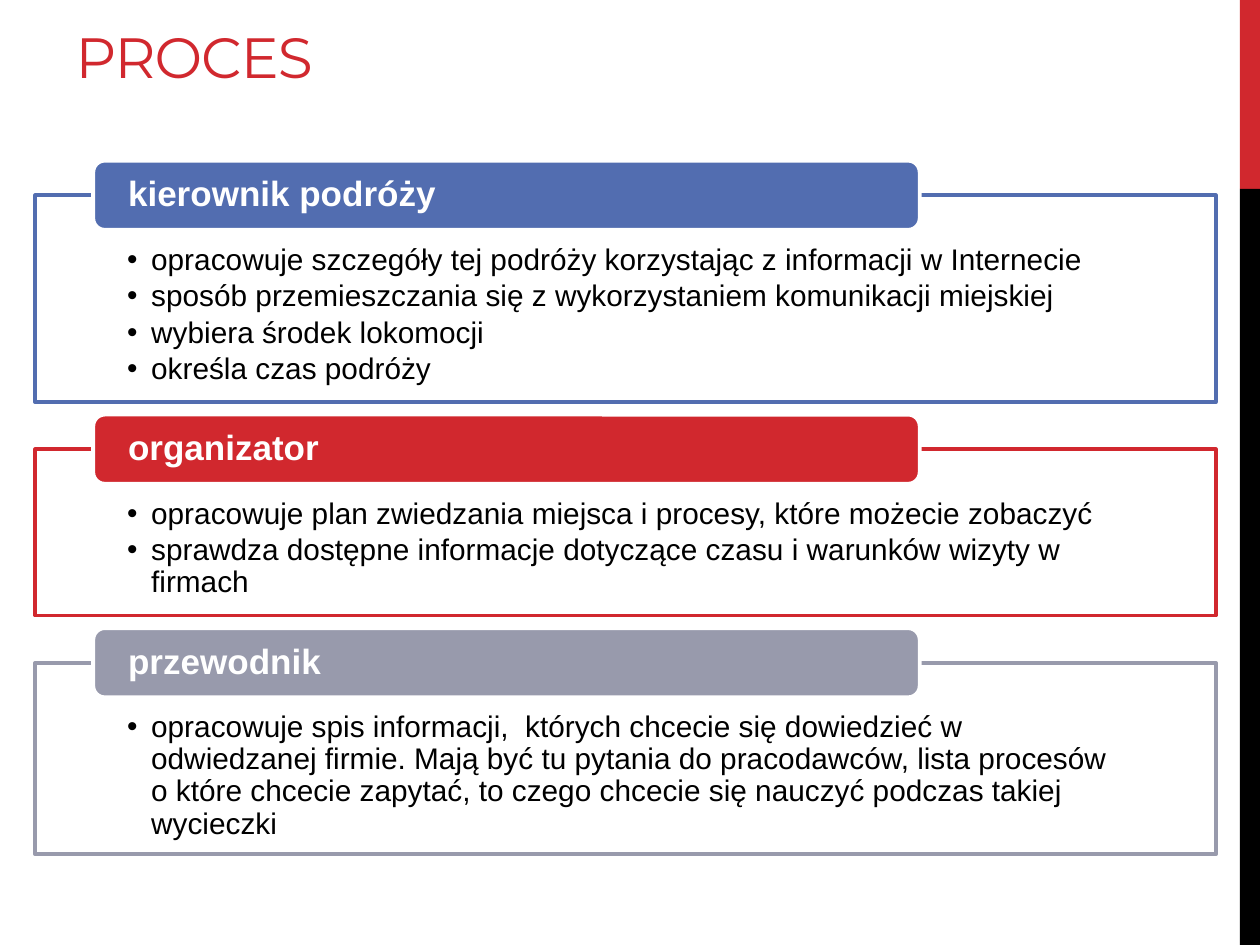
from lxml import etree
from pptx import Presentation
from pptx.dml.color import RGBColor
from pptx.enum.shapes import MSO_SHAPE
from pptx.enum.text import MSO_ANCHOR, MSO_AUTO_SIZE, PP_ALIGN
from pptx.oxml.ns import qn
from pptx.util import Inches, Pt

RECT = MSO_SHAPE.RECTANGLE
ROUND = MSO_SHAPE.ROUNDED_RECTANGLE
TOP, MID, LOW = MSO_ANCHOR.TOP, MSO_ANCHOR.MIDDLE, MSO_ANCHOR.BOTTOM
LEFT = PP_ALIGN.LEFT
NONE = MSO_AUTO_SIZE.NONE

HUES = {"red": "D1282E", "blue": "526DB0", "gray": "989AAC",
        "black": "000000", "white": "FFFFFF"}

deck = Presentation()
deck.slide_width, deck.slide_height = Inches(10), Inches(7.5)
COL, ROW = deck.slide_width / 100, deck.slide_height / 100
slide = deck.slides.add_slide(deck.slide_layouts[5])


def add_box(kind, x, y, w, h, fill, line=None):
    box = slide.shapes.add_shape(
        kind, int(x * COL), int(y * ROW), int(w * COL), int(h * ROW))
    box.shadow.inherit = False
    box.fill.solid()
    box.fill.fore_color.rgb = RGBColor.from_string(HUES[fill])
    if line:
        box.line.color.rgb = RGBColor.from_string(HUES[line])
        box.line.width = Pt(2.25)
    else:
        box.line.fill.background()
    return box


def put_text(box, lines, size, hue, font="Arial", bold=False, anchor=TOP,
             pad=(0.1, 0.05, 0.1, 0.05), space=None, after=0, bullet=False):
    frame = box.text_frame
    frame.word_wrap = True
    frame.auto_size = NONE
    frame.vertical_anchor = anchor
    (frame.margin_left, frame.margin_top,
     frame.margin_right, frame.margin_bottom) = map(Inches, pad)
    for i, line in enumerate(lines):
        para = frame.paragraphs[0] if i == 0 else frame.add_paragraph()
        para.alignment = LEFT
        para.line_spacing = space
        para.space_before = Pt(0)
        para.space_after = Pt(after)
        if bullet:
            props = para._p.get_or_add_pPr()
            props.set("marL", str(Inches(0.19)))
            props.set("indent", str(Inches(-0.19)))
            etree.SubElement(props, qn("a:buFont")).set("typeface", "Arial")
            etree.SubElement(props, qn("a:buChar")).set("char", "•")
        run = para.add_run()
        run.text = line
        run.font.name, run.font.size, run.font.bold = font, Pt(size), bold
        run.font.color.rgb = RGBColor.from_string(HUES[hue])


add_box(RECT, 98.4, 0, 1.6, 20, "red")
add_box(RECT, 98.4, 20, 1.6, 80, "black")

title = slide.shapes.title
title.left, title.top = int(5 * COL), int(2.27 * ROW)
title.width, title.height = int(63.3 * COL), int(7.87 * ROW)
put_text(title, ["PROCES"], 32.4, "red", font="Montserrat", anchor=LOW)
title.text_frame.paragraphs[0].runs[0].font._element.set("spc", "-60")

ROLES = [
    ("kierownik podróży", "blue", 21.87, [
        "opracowuje szczegóły tej podróży korzystając z informacji w Internecie",
        "sposób przemieszczania się z wykorzystaniem komunikacji miejskiej",
        "wybiera środek lokomocji",
        "określa czas podróży"]),
    ("organizator", "red", 17.6, [
        "opracowuje plan zwiedzania miejsca i procesy, które możecie zobaczyć",
        "sprawdza dostępne informacje dotyczące czasu i warunków wizyty w firmach"]),
    ("przewodnik", "gray", 20.27, [
        "opracowuje spis informacji,  których chcecie się dowiedzieć w "
        "odwiedzanej firmie. Mają być tu pytania do pracodawców, lista procesów "
        "o które chcecie zapytać, to czego chcecie się nauczyć podczas takiej "
        "wycieczki"]),
]
GAP, TAB = 5, 7.33

top = 20.67
for role, hue, tall, tasks in ROLES:
    body = add_box(RECT, 2.8, top, 93.7, tall, "white", hue)
    put_text(body, tasks, 17, "black", pad=(0.73, 0.39, 0.73, 0.13),
             space=0.9, after=2.55, bullet=True)
    head = add_box(ROUND, 7.4, top - TAB / 2, 65.6, TAB, hue, "white")
    put_text(head, [role], 20, "white", bold=True, anchor=MID,
             pad=(0.25, 0, 0.25, 0), space=0.9)
    top += tall + GAP

deck.save("out.pptx")
